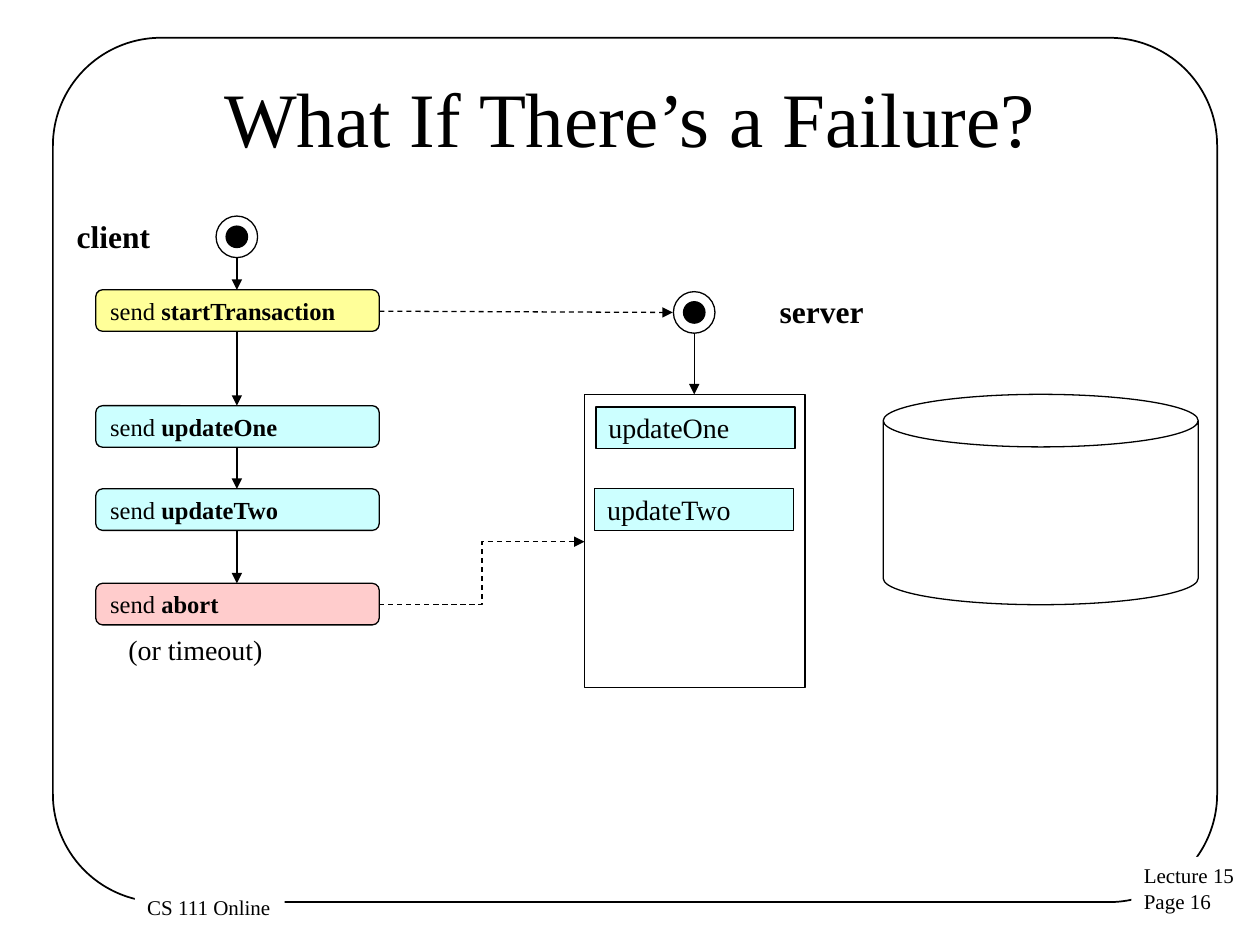
"""Draws the client and server flow of a transaction that fails."""
from dataclasses import dataclass, field
from typing import Any

from lxml.etree import SubElement
from pptx import Presentation
from pptx.dml.color import RGBColor
from pptx.enum.dml import MSO_LINE_DASH_STYLE as Dash
from pptx.enum.shapes import MSO_CONNECTOR as Conn, MSO_SHAPE as Kind
from pptx.enum.text import MSO_ANCHOR as Anchor, PP_ALIGN as Align
from pptx.oxml.ns import qn
from pptx.util import Inches, Pt

INK, PAPER = "000000", "FFFFFF"
YELLOW, CYAN, PINK = "FFFF99", "CCFFFF", "FFCCCC"
FONT = {"name": "Times New Roman"}
MID = {"vertical_anchor": Anchor.MIDDLE}
LEFT, WIDE, HIGH, AXIS = 0.76, 2.25, 0.33, 1.88


@dataclass
class Box:
    kind: Kind
    at: tuple[float, float, float, float]
    fill: str = ""
    adj: float | None = None
    line: float = 0.75


@dataclass
class Label:
    rows: list[list[tuple[str, bool]]]
    size: int
    frame: dict[str, Any] = field(default_factory=dict)
    align: Align = Align.LEFT


@dataclass
class Arrow:
    start: tuple[float, float]
    end: tuple[float, float]
    dash: bool = False
    kind: Conn = Conn.STRAIGHT


@dataclass
class Step:
    top: float
    name: str
    fill: str


def paint(target: Any, tone: str) -> None:
    if hasattr(target, "solid"):
        target.solid()
        target = target.fore_color
    target.rgb = RGBColor.from_string(tone)


def style(target: Any, values: dict[str, Any]) -> None:
    for name, value in values.items():
        setattr(target, name, value)


def write(shape: Any, label: Label) -> None:
    frame = shape.text_frame
    style(frame, {"word_wrap": False, "vertical_anchor": Anchor.TOP} | label.frame)
    for i, row in enumerate(label.rows):
        para = frame.add_paragraph() if i else frame.paragraphs[0]
        para.alignment = label.align
        for text, bold in row:
            run = para.add_run()
            run.text = text
            style(run.font, FONT | {"size": Pt(label.size), "bold": bold})
            paint(run.font.color, INK)


def draw(slide: Any, box: Box, label: Label | None = None) -> None:
    shape = slide.shapes.add_shape(box.kind, *map(Inches, box.at))
    shape.shadow.inherit = False
    if box.adj is not None:
        shape.adjustments[0] = box.adj
    if box.fill:
        paint(shape.fill, box.fill)
    else:
        shape.fill.background()
    if box.line:
        paint(shape.line.fill, INK)
        shape.line.width = Pt(box.line)
    else:
        shape.line.fill.background()
    if label:
        write(shape, label)


def note(slide: Any, at: tuple[float, float, float, float], label: Label) -> None:
    write(slide.shapes.add_textbox(*map(Inches, at)), label)


def link(slide: Any, arrow: Arrow) -> None:
    ends = map(Inches, arrow.start + arrow.end)
    wire = slide.shapes.add_connector(arrow.kind, *ends)
    paint(wire.line.fill, INK)
    wire.line.width = Pt(0.75)
    if arrow.dash:
        wire.line.dash_style = Dash.DASH
    props = wire.line._get_or_add_ln()
    SubElement(props, qn("a:tailEnd"), type="triangle")
    SubElement(props.getparent(), qn("a:effectLst"))


def start(slide: Any, x: float, y: float) -> None:
    for size, fill in ((0.17, INK), (0.33, "")):
        draw(slide, Box(Kind.OVAL, (x - size / 2, y - size / 2, size, size), fill))


def main() -> None:
    deck = Presentation()
    style(deck, {"slide_width": Inches(10), "slide_height": Inches(7.5)})
    slide = deck.slides.add_slide(deck.slide_layouts[6])

    draw(slide, Box(Kind.ROUNDED_RECTANGLE, (0.42, 0.3, 9.24, 6.86), adj=0.125, line=1))
    for at, rows in (
        ((8.98, 6.8, 0.93, 0.51), ["Lecture 15", "Page 16"]),
        ((1.07, 7.05, 1.19, 0.3), ["CS 111 Online"]),
    ):
        label = Label([[(row, False)] for row in rows], 12)
        draw(slide, Box(Kind.RECTANGLE, at, PAPER, line=0), label)
    title = Label([[("What If There’s a Failure?", False)]], 44,
                  MID | {"word_wrap": True}, Align.CENTER)
    note(slide, (0.5, 0.3, 9, 1.25), title)

    for x, y in ((AXIS, 1.88), (5.51, 2.48)):
        start(slide, x, y)
    draw(slide, Box(Kind.RECTANGLE, (4.64, 3.13, 1.75, 2.33)))
    draw(slide, Box(Kind.CAN, (7.01, 3.13, 2.5, 1.67), adj=0.25))

    steps = [
        Step(2.3, "startTransaction", YELLOW),
        Step(3.22, "updateOne", CYAN),
        Step(3.88, "updateTwo", CYAN),
        Step(4.63, "abort", PINK),
    ]
    base = 2.05
    for step in steps:
        box = Box(Kind.ROUNDED_RECTANGLE, (LEFT, step.top, WIDE, HIGH), step.fill, 0.167)
        draw(slide, box, Label([[("send ", False), (step.name, True)]], 14, MID))
        link(slide, Arrow((AXIS, base), (AXIS, step.top)))
        base = step.top + HIGH

    for x, y, name in ((4.73, 3.23, "updateOne"), (4.72, 3.88, "updateTwo")):
        box = Box(Kind.RECTANGLE, (x, y, 1.58, HIGH), CYAN)
        draw(slide, box, Label([[(name, False)]], 16, MID))

    edge = LEFT + WIDE
    for arrow in (
        Arrow((5.51, 2.65), (5.51, 3.13)),
        Arrow((edge, 2.47), (5.34, 2.48), True),
        Arrow((edge, 4.8), (4.64, 4.3), True, Conn.ELBOW),
    ):
        link(slide, arrow)

    for at, name in (((0.51, 1.67, 0.79, 0.4), "client"), ((6.09, 2.27, 0.87, 0.4), "server")):
        note(slide, at, Label([[(name, True)]], 18))
    late = Label([[("(or timeout)", False)]], 16, {"word_wrap": True})
    note(slide, (0.92, 4.97, 1.92, 0.37), late)
    deck.save("out.pptx")


if __name__ == "__main__":
    main()
